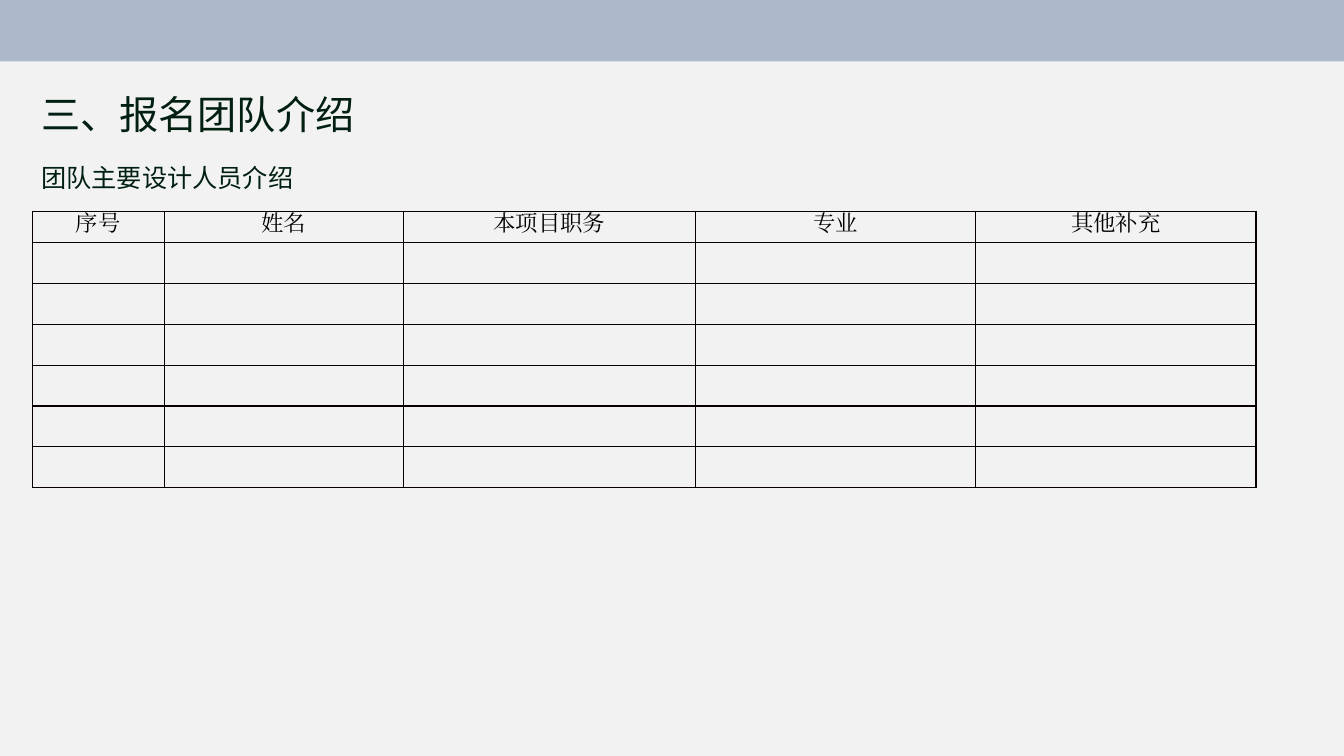
from lxml import etree
from pptx import Presentation
from pptx.dml.color import RGBColor
from pptx.enum.shapes import MSO_SHAPE
from pptx.enum.text import MSO_ANCHOR, PP_ALIGN
from pptx.oxml.ns import qn
from pptx.util import Cm, Pt

RECTANGLE = MSO_SHAPE.RECTANGLE
TOP = MSO_ANCHOR.TOP
CENTER = PP_ALIGN.CENTER

HEADING_FONT = "Noto Sans CJK SC"
TABLE_FONT = "Times New Roman"
HEADERS = ["序号", "姓名", "本项目职务", "专业", "其他补充"]
COLUMN_WIDTHS = [3.33, 6.02, 7.37, 7.06, 7.06]
HEADER_HEIGHT, ROW_HEIGHT, MEMBER_ROWS = 0.78, 1.03, 6


def color(hex_code):
    return RGBColor.from_string(hex_code)


def style_text(paragraph, font_name, size, hex_code):
    font = paragraph.font
    font.name, font.size = font_name, Pt(size)
    font.color.rgb = color(hex_code)
    # East Asian characters need their own typeface entry
    for run in paragraph.runs:
        properties = run._r.get_or_add_rPr()
        etree.SubElement(properties, qn("a:ea"), typeface=font_name)


def add_band(slide, left, top, width, height, fill):
    band = slide.shapes.add_shape(RECTANGLE, Cm(left), Cm(top), Cm(width), Cm(height))
    band.shadow.inherit = False
    band.fill.solid()
    band.fill.fore_color.rgb = color(fill)
    band.line.fill.background()


def add_heading(slide, text, top, height, size):
    heading = slide.shapes.add_textbox(Cm(0.79), Cm(top), Cm(16.94), Cm(height))
    frame = heading.text_frame
    frame.word_wrap = True
    paragraph = frame.paragraphs[0]
    paragraph.text = text
    paragraph.line_spacing = 1.5
    style_text(paragraph, HEADING_FONT, size, "022012")


def add_borders(cell, hex_code, width):
    properties = cell._tc.get_or_add_tcPr()
    for position, side in enumerate(("a:lnL", "a:lnR", "a:lnT", "a:lnB")):
        border = etree.Element(qn(side), w=str(Pt(width)))
        fill = etree.SubElement(border, qn("a:solidFill"))
        etree.SubElement(fill, qn("a:srgbClr"), val=hex_code)
        properties.insert(position, border)


def add_team_table(slide, left, top):
    height = HEADER_HEIGHT + MEMBER_ROWS * ROW_HEIGHT
    team = slide.shapes.add_table(
        MEMBER_ROWS + 1, len(HEADERS),
        Cm(left), Cm(top), Cm(sum(COLUMN_WIDTHS)), Cm(height)).table
    team.first_row = team.horz_banding = False
    for column, width in zip(team.columns, COLUMN_WIDTHS):
        column.width = Cm(width)
    for index, row in enumerate(team.rows):
        row.height = Cm(ROW_HEIGHT if index else HEADER_HEIGHT)
    for cell in team.iter_cells():
        cell.fill.background()
        add_borders(cell, "080000", 1)

    # Header labels
    for cell, label in zip(team.rows[0].cells, HEADERS):
        cell.margin_left = cell.margin_right = cell.margin_top = 0
        cell.margin_bottom = Cm(0.08)
        cell.vertical_anchor = TOP
        paragraph = cell.text_frame.paragraphs[0]
        paragraph.text = label
        paragraph.alignment = CENTER
        style_text(paragraph, TABLE_FONT, 16, "000000")


def main():
    presentation = Presentation()
    presentation.slide_width, presentation.slide_height = Cm(33.87), Cm(19.05)
    slide = presentation.slides.add_slide(presentation.slide_layouts[6])
    slide.background.fill.solid()
    slide.background.fill.fore_color.rgb = color("F2F2F2")

    # Top band
    add_band(slide, -0.15, 0, 34.09, 1.55, "ADB9CA")

    # Headings
    add_heading(slide, "团队主要设计人员介绍", 3.58, 1.4, 18)
    add_heading(slide, "三、报名团队介绍", 1.55, 2.06, 28)

    # Team members
    add_team_table(slide, 0.81, 5.33)

    presentation.save("out.pptx")


if __name__ == "__main__":
    main()
